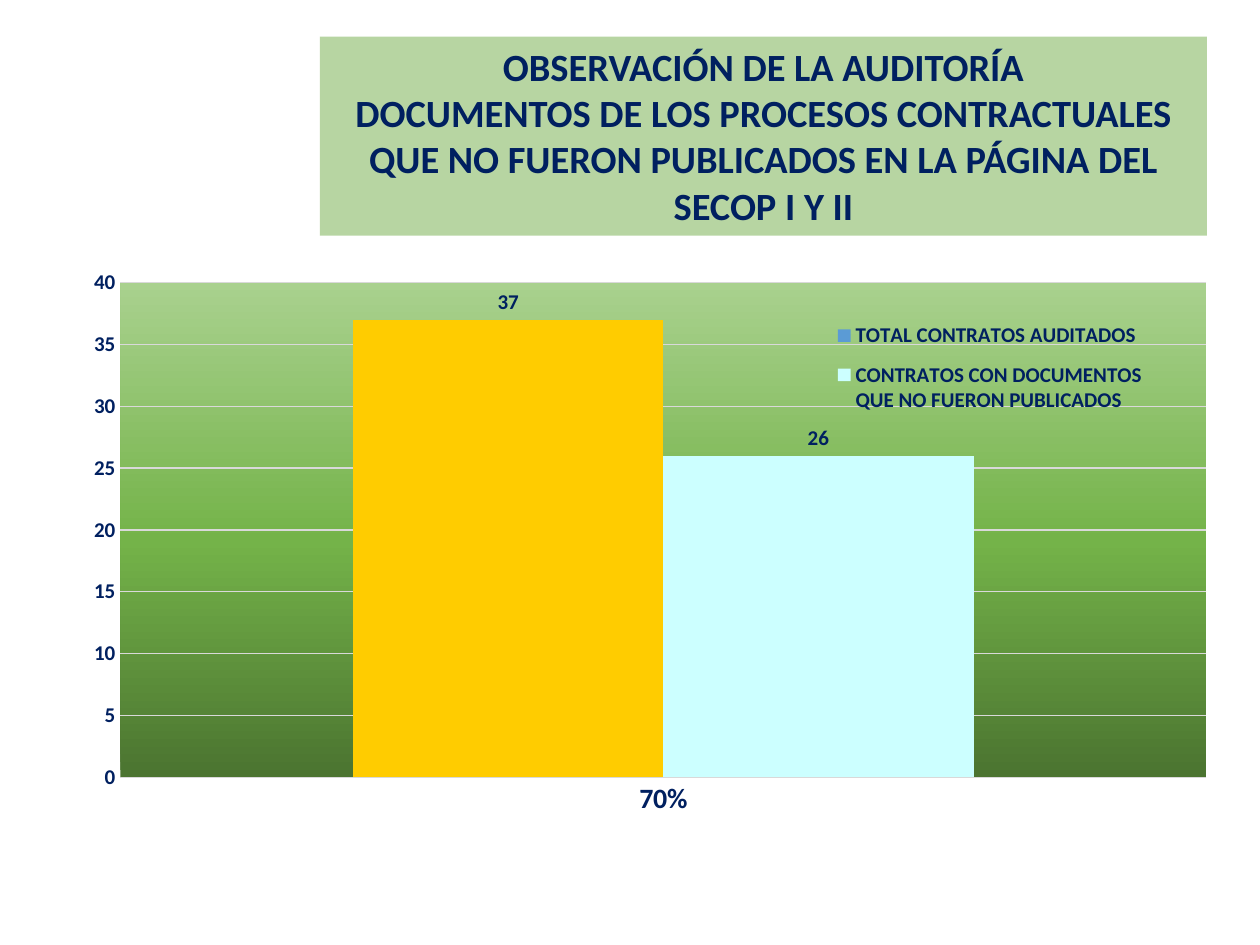
from lxml import etree
from pptx import Presentation
from pptx.chart.data import CategoryChartData
from pptx.dml.color import RGBColor
from pptx.enum.chart import XL_CHART_TYPE as ChartType
from pptx.enum.chart import XL_LABEL_POSITION as LabelPos
from pptx.enum.chart import XL_LEGEND_POSITION as LegendPos
from pptx.enum.chart import XL_TICK_MARK as Tick
from pptx.enum.text import MSO_ANCHOR, MSO_AUTO_SIZE, PP_ALIGN
from pptx.oxml import parse_xml
from pptx.oxml.ns import nsdecls, qn
from pptx.util import Cm, Pt

COLORS = {"navy": "002060", "green": "70AD47", "blue": "5B9BD5",
          "amber": "FFCC00", "cyan": "CCFFFF", "grid": "D9D9D9"}
GRADIENT = {0: "4B7430", 48: "74B349", 100: "A9D18E"}
TITLE = ["OBSERVACIÓN DE LA AUDITORÍA",
         "DOCUMENTOS DE LOS PROCESOS CONTRACTUALES QUE NO FUERON "
         "PUBLICADOS EN LA PÁGINA DEL SECOP I Y II"]
SERIES = [("TOTAL CONTRATOS AUDITADOS", 37, "blue"),
          ("CONTRATOS CON DOCUMENTOS QUE NO FUERON PUBLICADOS", 26, "cyan")]


def rgb(name):
    return RGBColor.from_string(COLORS[name])


def format_font(font, size):
    for key, value in {"name": "Calibri", "size": Pt(size), "bold": True}.items():
        setattr(font, key, value)
    font.color.rgb = rgb("navy")


def paint(fmt, color):
    fmt.fill.solid()
    fmt.fill.fore_color.rgb = rgb(color)


def set_layout(element, index, box, inner=False):
    """Place a chart part by fractions (x, y, w, h) of the chart area."""
    for old in element.findall(qn("c:layout")):
        element.remove(old)
    target = '<c:layoutTarget val="inner"/>' if inner else ""
    modes = "".join(f'<c:{k}Mode val="edge"/>' for k in "xy")
    sizes = "".join(f'<c:{k} val="{v}"/>' for k, v in zip("xywh", box))
    element.insert(index, parse_xml(
        f'<c:layout {nsdecls("c")}><c:manualLayout>{target}{modes}{sizes}'
        "</c:manualLayout></c:layout>"))


def fill_plot(plot_area):
    stops = "".join(f'<a:gs pos="{pos * 1000}"><a:srgbClr val="{color}"/></a:gs>'
                    for pos, color in GRADIENT.items())
    plot_area.append(parse_xml(
        f'<c:spPr {nsdecls("c", "a")}><a:gradFill><a:gsLst>{stops}</a:gsLst>'
        '<a:lin ang="16200000" scaled="0"/></a:gradFill></c:spPr>'))


def add_title(s, left, top, width, height):
    sp = s.shapes.title
    sp.left, sp.top, sp.width, sp.height = left, top, width, height
    paint(sp, "green")
    color = sp.fill._xPr.find(".//" + qn("a:srgbClr"))
    etree.SubElement(color, qn("a:alpha"), val="50000")
    tf = sp.text_frame
    for key, value in {"word_wrap": True, "auto_size": MSO_AUTO_SIZE.NONE,
                       "vertical_anchor": MSO_ANCHOR.TOP}.items():
        setattr(tf, key, value)
    tf.text = "\n".join(TITLE)
    for p in tf.paragraphs:
        p.alignment = PP_ALIGN.CENTER
        for r in p.runs:
            format_font(r.font, 22)


def format_axes(chart):
    for axis, size in ((chart.category_axis, 16), (chart.value_axis, 12)):
        axis.major_tick_mark = axis.minor_tick_mark = Tick.NONE
        axis.format.line.fill.background()
        format_font(axis.tick_labels.font, size)
    axis = chart.value_axis
    axis.minimum_scale, axis.maximum_scale, axis.major_unit = 0, 40, 5
    line = axis.major_gridlines.format.line
    line.color.rgb = rgb("grid")
    line.width = Pt(0.75)


def add_contract_chart(s, left, top, width, height):
    data = CategoryChartData(number_format="0")
    data.categories = ["70%"]
    for name, value, _ in SERIES:
        data.add_series(name, [value])
    chart = s.shapes.add_chart(ChartType.COLUMN_CLUSTERED, left, top,
                               width, height, data).chart
    chart.has_title = False
    format_font(chart.font, 12)
    format_axes(chart)

    plot = chart.plots[0]
    plot.gap_width, plot.overlap, plot.vary_by_categories = 150, 0, False
    for series, (_, _, color) in zip(plot.series, SERIES):
        paint(series.format, color)
        labels = series.data_labels
        labels.show_value = True
        labels.position = LabelPos.OUTSIDE_END
        format_font(labels.font, 12)
    paint(plot.series[0].points[0].format, "amber")

    chart.has_legend = True
    legend = chart.legend
    legend.position = LegendPos.RIGHT
    legend.include_in_layout = True
    format_font(legend.font, 12)
    set_layout(legend._element, 1, (0.66, 0.07, 0.3, 0.21))

    plot_area = chart._chartSpace.find(".//" + qn("c:plotArea"))
    set_layout(plot_area, 0, (0.046, 0.023, 0.954, 0.884), inner=True)
    fill_plot(plot_area)


def main():
    prs = Presentation()
    prs.slide_width, prs.slide_height = Cm(25.4), Cm(19.05)
    s = prs.slides.add_slide(prs.slide_layouts[5])
    add_title(s, Cm(6.45), Cm(0.74), Cm(17.88), Cm(4.01))
    add_contract_chart(s, Cm(1.37), Cm(5.44), Cm(22.96), Cm(11.28))
    prs.save("out.pptx")


if __name__ == "__main__":
    main()
